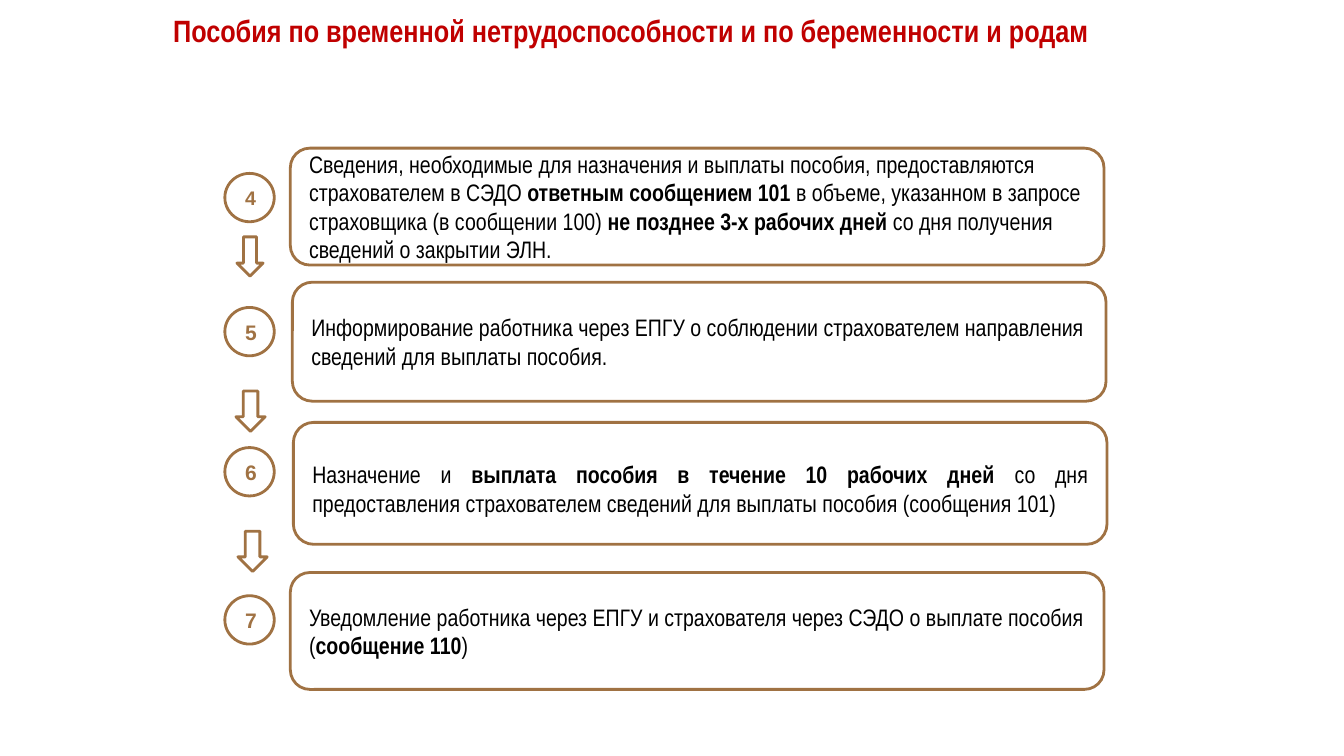
from dataclasses import dataclass

import pptx
import pptx.dml.color
import pptx.enum.shapes
import pptx.enum.text
import pptx.util

Inches = pptx.util.Inches
Shape = pptx.enum.shapes.MSO_SHAPE
Align = pptx.enum.text.PP_ALIGN
Anchor = pptx.enum.text.MSO_ANCHOR

BROWN = pptx.dml.color.RGBColor(0xA0, 0x72, 0x43)
RED = pptx.dml.color.RGBColor(0xC0, 0x00, 0x00)
BLACK = pptx.dml.color.RGBColor(0x00, 0x00, 0x00)

BOX_WIDTH = 8.07
CIRCLE_LEFT, CIRCLE_WIDTH, CIRCLE_HEIGHT = 2.23, 0.49, 0.48


@dataclass
class Run:
    text: str
    bold: bool = False


@dataclass
class Step:
    number: str
    number_size: int
    circle_top: float
    left: float
    top: float
    height: float
    runs: list[Run]
    align: Align = Align.LEFT
    top_inset: float = 0.07


@dataclass
class Arrow:
    left: float
    top: float
    width: float
    height: float


STEPS = [
    Step("4", 14, 1.72, 2.88, 1.47, 1.16, [
        Run("Сведения, необходимые для назначения и выплаты пособия, "
            "предоставляются страхователем в СЭДО "),
        Run("ответным сообщением 101 ", True),
        Run("в объеме, указанном в запросе страховщика (в сообщении 100) "),
        Run("не позднее 3-х рабочих дней ", True),
        Run("со дня получения сведений о закрытии ЭЛН."),
    ]),
    Step("5", 15, 3.05, 2.9, 2.8, 1.18, [
        Run("Информирование работника через ЕПГУ о соблюдении страхователем "
            "направления сведений для выплаты пособия."),
    ]),
    Step("6", 15, 4.44, 2.91, 4.19, 1.21, [
        Run("Назначение и "),
        Run("выплата пособия в течение 10 рабочих дней ", True),
        Run("со дня предоставления страхователем сведений для выплаты пособия "
            "(сообщения 101)"),
    ], Align.JUSTIFY, 0.17),
    Step("7", 15, 5.91, 2.88, 5.68, 1.16, [
        Run("Уведомление работника через ЕПГУ и страхователя через СЭДО "
            "о выплате пособия ("),
        Run("сообщение 110", True),
        Run(")"),
    ]),
]

ARROWS = [
    Arrow(2.35, 2.35, 0.26, 0.39),
    Arrow(2.34, 3.88, 0.29, 0.4),
    Arrow(2.36, 5.27, 0.29, 0.4),
]


def write_text(sp, runs: list[Run], size: int, font: str, color,
               align: Align, anchor: Anchor, top_inset: float = 0.07):
    tf = sp.text_frame
    frame_format = {
        "word_wrap": True,
        "auto_size": pptx.enum.text.MSO_AUTO_SIZE.NONE,
        "vertical_anchor": anchor,
        "margin_left": Inches(0.13),
        "margin_right": Inches(0.13),
        "margin_top": Inches(top_inset),
        "margin_bottom": Inches(0.07),
    }
    for name, value in frame_format.items():
        setattr(tf, name, value)
    p = tf.paragraphs[0]
    p.alignment = align
    for run in runs:
        r = p.add_run()
        r.text = run.text
        font_format = {"name": font, "size": pptx.util.Pt(size), "bold": run.bold}
        for name, value in font_format.items():
            setattr(r.font, name, value)
        r.font.color.rgb = color
    return p


def add_outline(s, kind: Shape, left: float, top: float, width: float, height: float):
    """Add an unfilled shape with a brown line."""
    sp = s.shapes.add_shape(kind, Inches(left), Inches(top), Inches(width), Inches(height))
    sp.shadow.inherit = False
    sp.fill.background()
    sp.line.color.rgb = BROWN
    sp.line.width = pptx.util.Pt(2)
    return sp


def add_title(s) -> None:
    sp = s.shapes.title
    place = {"left": 0.75, "top": 0.23, "width": 11.01, "height": 0.33}
    for name, value in place.items():
        setattr(sp, name, Inches(value))
    title = Run("Пособия по временной нетрудоспособности и по беременности и родам", True)
    p = write_text(sp, [title], 22, "Arial Narrow", RED, Align.CENTER, Anchor.BOTTOM)
    p.line_spacing = 0.9


def add_step(s, step: Step) -> None:
    circle = add_outline(s, Shape.OVAL, CIRCLE_LEFT, step.circle_top,
                         CIRCLE_WIDTH, CIRCLE_HEIGHT)
    write_text(circle, [Run(step.number, True)], step.number_size, "Arial", BROWN,
               Align.CENTER, Anchor.MIDDLE)
    box = add_outline(s, Shape.ROUNDED_RECTANGLE, step.left, step.top,
                      BOX_WIDTH, step.height)
    write_text(box, step.runs, 17, "Arial Narrow", BLACK,
               step.align, Anchor.MIDDLE, step.top_inset)


def main() -> None:
    prs = pptx.Presentation()
    prs.slide_width, prs.slide_height = Inches(13.33), Inches(7.5)
    s = prs.slides.add_slide(prs.slide_layouts.get_by_name("Title Only"))
    add_title(s)
    for step in STEPS:
        add_step(s, step)
    for arrow in ARROWS:
        add_outline(s, Shape.DOWN_ARROW, arrow.left, arrow.top, arrow.width, arrow.height)
    prs.save("out.pptx")


if __name__ == "__main__":
    main()
